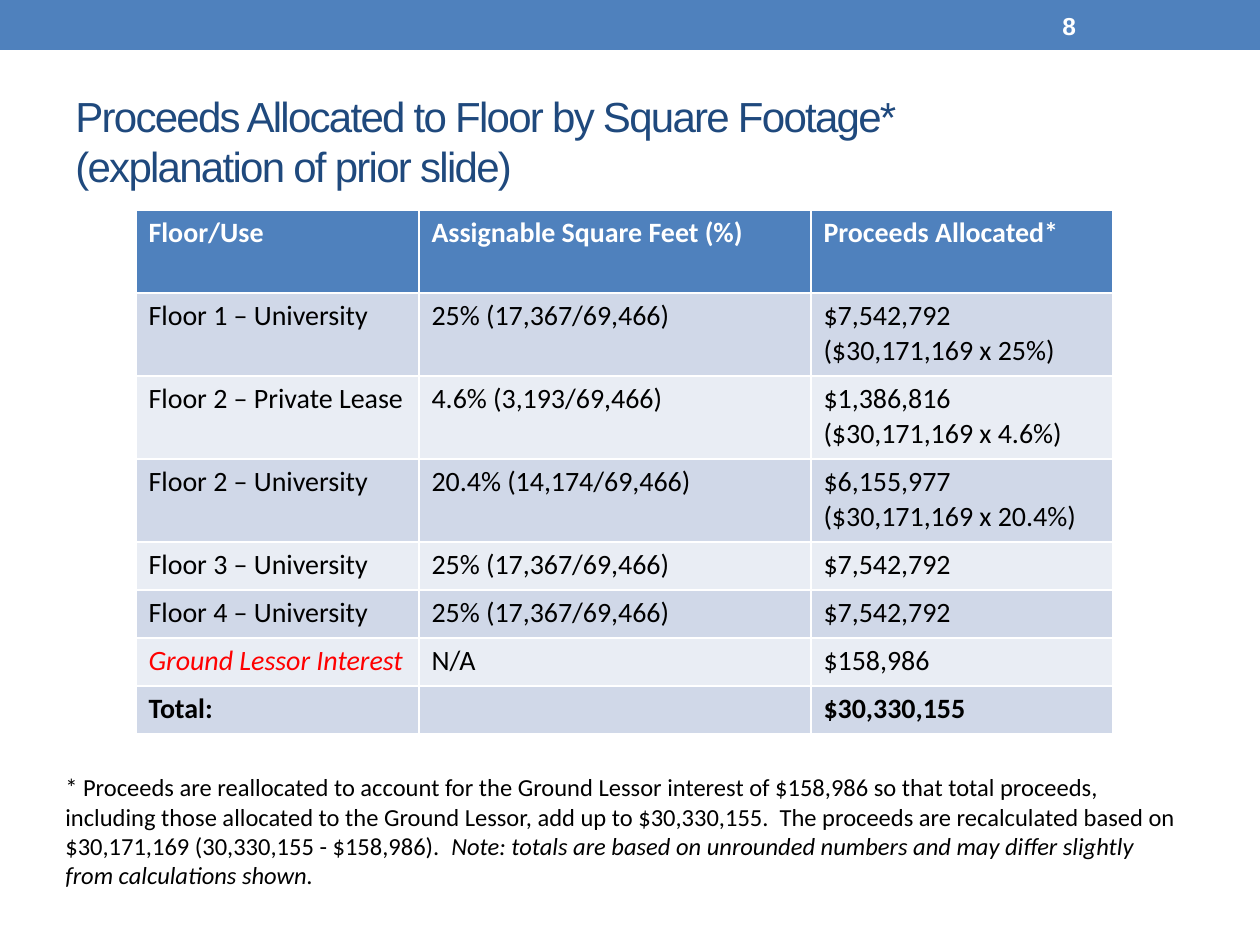
from pptx import Presentation
from pptx.dml.color import RGBColor as RGB
from pptx.enum.shapes import MSO_SHAPE as Shape
from pptx.enum.text import MSO_ANCHOR as Anchor
from pptx.util import Emu, Pt

TITLE = "Proceeds Allocated to Floor by Square Footage* \v(explanation of prior slide)"
PAGE = "8"
ROWS = [
    ("Floor/Use", "Assignable Square Feet (%)", "Proceeds Allocated*"),
    ("Floor 1 – University", "25% (17,367/69,466)", "$7,542,792\n($30,171,169 x 25%)"),
    ("Floor 2 – Private Lease", "4.6% (3,193/69,466)", "$1,386,816 ($30,171,169 x 4.6%)"),
    ("Floor 2 – University", "20.4% (14,174/69,466)", "$6,155,977 ($30,171,169 x 20.4%)"),
    ("Floor 3 – University", "25% (17,367/69,466)", "$7,542,792"),
    ("Floor 4 – University", "25% (17,367/69,466)", "$7,542,792"),
    ("Ground Lessor Interest", "N/A", "$158,986"),
    ("Total:", "", "$30,330,155"),
]
NOTE = [
    ("* Proceeds are reallocated to account for the Ground Lessor interest of $158,986 "
     "so that total proceeds, including those allocated to the Ground Lessor, add up to "
     "$30,330,155.  The proceeds are recalculated based on $30,171,169 "
     "(30,330,155 - $158,986).  ", False),
    ("Note: totals are based on unrounded numbers and may differ slightly "
     "from calculations shown.", True),
]
COLS = (283, 392, 302)
HIGH = (83,) * 4 + (48,) * 4
BLUE, NAVY, WHITE, BLACK, RED = "4F81BD", "1F497D", "FFFFFF", "000000", "FF0000"
BANDS = ("E9EDF4", "D0D8E8")


def px(n):
    return Emu(round(n * 914400 / 126))


def paint(fill, color):
    fill.solid()
    fill.fore_color.rgb = RGB.from_string(color)


def style(frame, size, name, color, bold=False):
    for par in frame.paragraphs:
        font = par.font
        font.size, font.name, font.bold = Pt(size), name, bold
        font.color.rgb = RGB.from_string(color)


def add_box(slide, box, anchor=Anchor.TOP):
    frame = slide.shapes.add_textbox(*map(px, box)).text_frame
    frame.word_wrap = True
    frame.vertical_anchor = anchor
    return frame


def add_grid(slide):
    box = (136, 210, sum(COLS), sum(HIGH))
    grid = slide.shapes.add_table(len(ROWS), len(COLS), *map(px, box)).table
    for col, wide in zip(grid.columns, COLS):
        col.width = px(wide)
    for r, (texts, high) in enumerate(zip(ROWS, HIGH)):
        grid.rows[r].height = px(high)
        head, total = r == 0, r == len(ROWS) - 1
        for c, text in enumerate(texts):
            cell = grid.cell(r, c)
            cell.text = text
            paint(cell.fill, BLUE if head else BANDS[r % 2])
            lessor = text.startswith("Ground")
            color = WHITE if head else RED if lessor else BLACK
            style(cell.text_frame, 16, "Calibri", color, head or total)
            if lessor:
                cell.text_frame.paragraphs[0].font.italic = True


def main():
    """Build the slide on floor proceeds and save it."""
    deck = Presentation()
    deck.slide_width, deck.slide_height = px(1260), px(945)
    slide = deck.slides.add_slide(deck.slide_layouts[6])

    bar = slide.shapes.add_shape(Shape.RECTANGLE, 0, 0, px(1260), px(50))
    bar.shadow.inherit = False
    paint(bar.fill, BLUE)
    bar.line.fill.background()

    title = add_box(slide, (63, 73, 1134, 136), Anchor.MIDDLE)
    title.text = TITLE
    style(title, 24, "Arial", NAVY)
    for run in title.paragraphs[0].runs:
        run._r.get_or_add_rPr().set("spc", "-100")

    add_grid(slide)

    note = add_box(slide, (53, 766, 1144, 131))
    for text, slant in NOTE:
        run = note.paragraphs[0].add_run()
        run.text, run.font.italic = text, slant
    style(note, 14, "Calibri", BLACK)

    page = add_box(slide, (1050, 3, 147, 45), Anchor.MIDDLE)
    page.text = PAGE
    style(page, 14, "Arial", WHITE, True)

    deck.save("out.pptx")


if __name__ == "__main__":
    main()
